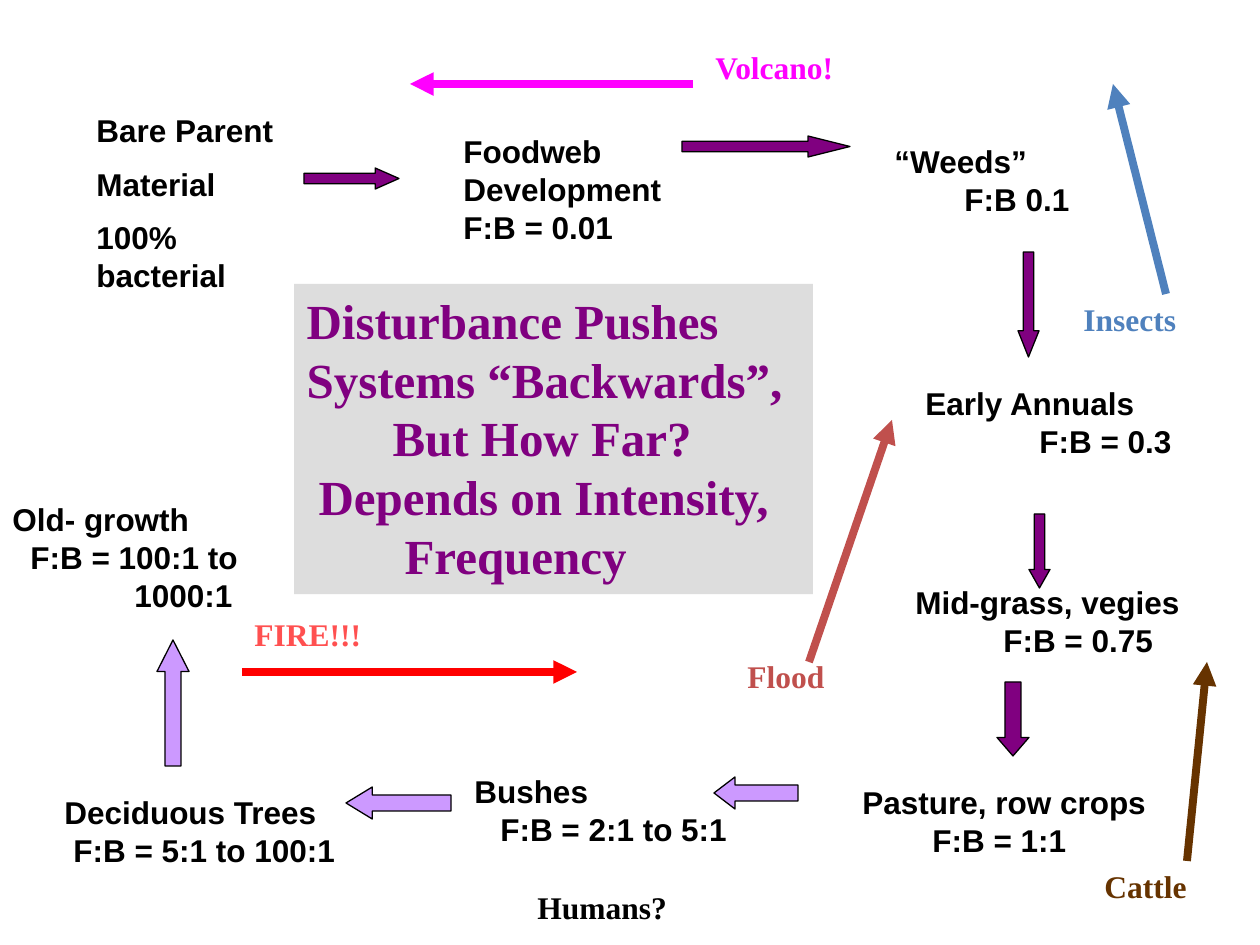
from lxml.etree import SubElement
from pptx import Presentation
from pptx.dml.color import RGBColor
from pptx.enum.shapes import MSO_CONNECTOR, MSO_SHAPE
from pptx.enum.text import MSO_ANCHOR, MSO_AUTO_SIZE, PP_ALIGN
from pptx.oxml.ns import qn
from pptx.util import Pt

SCALE = 914400 / 126
SANS, SERIF = "Arial", "Times New Roman"
PURPLE, LILAC, BLACK = "800080", "CC99FF", "000000"
RIGHT, DOWN = MSO_SHAPE.RIGHT_ARROW, MSO_SHAPE.DOWN_ARROW
LEFT, UP = MSO_SHAPE.LEFT_ARROW, MSO_SHAPE.UP_ARROW

STAGES = [
    (451, 126, 223, 126, [("Foodweb", 0), ("Development", 0), ("F:B = 0.01", 0)]),
    (882, 136, 200, 88, [("“Weeds”", 0), ("F:B 0.1", 70)]),
    (913, 378, 271, 88, [("Early Annuals", 0), ("F:B = 0.3", 114)]),
    (903, 577, 290, 88, [("Mid-grass, vegies", 0), ("F:B = 0.75", 88)]),
    (850, 777, 309, 88, [("Pasture, row crops", 0), ("F:B = 1:1", 70)]),
    (462, 766, 278, 88, [("Bushes", 0), ("F:B = 2:1 to 5:1", 26)]),
    (52, 787, 296, 88, [("Deciduous Trees", 0), ("F:B = 5:1 to 100:1", 9)]),
    (0, 494, 260, 126, [("Old- growth", 0), ("F:B = 100:1 to", 18), ("1000:1", 122)]),
]
STEPS = [
    (RIGHT, 304, 168, 95, 21, PURPLE),
    (RIGHT, 682, 136, 168, 21, PURPLE),
    (DOWN, 1018, 252, 21, 105, PURPLE),
    (DOWN, 1029, 514, 21, 74, PURPLE),
    (DOWN, 997, 682, 32, 74, PURPLE),
    (LEFT, 714, 777, 84, 32, LILAC),
    (LEFT, 346, 787, 105, 32, LILAC),
    (UP, 157, 640, 32, 126, LILAC),
]
LABELS = [
    ("FIRE!!!", 242, 609, 168, "FF5050"),
    ("Flood", 735, 651, 168, "C0504D"),
    ("Insects", 1071, 294, 158, "4F81BD"),
    ("Volcano!", 703, 42, 231, "FF00FF"),
    ("Humans?", 525, 882, 325, BLACK),
    ("Cattle", 1092, 861, 168, "663300"),
]
SHOCKS = [
    (242, 672, 577, 672, "FF0000"),
    (809, 662, 892, 420, "C0504D"),
    (1166, 294, 1113, 84, "4F81BD"),
    (693, 84, 410, 84, "FF00FF"),
    (1187, 861, 1207, 662, "663300"),
]


def px(*sizes):
    """Turn pixels into EMU."""
    return [round(size * SCALE) for size in sizes]


def hue(code):
    """Turn a hex string into a colour."""
    return RGBColor.from_string(code)


class Board:
    """Holds the text style and the current slide."""

    def __init__(self, deck):
        """Add a slide with a title."""
        self.size = 18
        self.slide = deck.slides.add_slide(deck.slide_layouts[5])
        self.shapes = self.slide.shapes

    def fill(self, frame, lines, face, code, size, gap=0):
        """Fill a frame with indented bold lines."""
        frame.auto_size = MSO_AUTO_SIZE.SHAPE_TO_FIT_TEXT
        frame.vertical_anchor = MSO_ANCHOR.TOP
        for order, (words, indent) in enumerate(lines):
            para = frame.add_paragraph() if order else frame.paragraphs[0]
            para.text = words
            para.alignment = PP_ALIGN.LEFT
            para.space_before = Pt(gap if order else 0)
            font = para.font
            font.name, font.size, font.bold = face, Pt(size), True
            font.color.rgb = hue(code)
            if indent:
                props = para._p.get_or_add_pPr()
                props.set("marL", str(px(indent)[0]))
                props.set("indent", "0")

    def title(self, box, lines):
        """Place the title on its grey panel."""
        head = self.shapes.title
        head.left, head.top, head.width, head.height = px(*box)
        head.fill.solid()
        head.fill.fore_color.rgb = hue("DDDDDD")
        head.text_frame.word_wrap = False
        self.fill(head.text_frame, lines, SERIF, PURPLE, 28)

    def text(self, box, lines, face=SANS, code=BLACK, wrap=False, gap=0):
        """Add a text box."""
        frame = self.shapes.add_textbox(*px(*box)).text_frame
        frame.word_wrap = wrap
        self.fill(frame, lines, face, code, self.size, gap)

    def step(self, kind, left, top, width, height, code):
        """Add a block arrow."""
        arrow = self.shapes.add_shape(kind, *px(left, top, width, height))
        arrow.shadow.inherit = False
        arrow.adjustments[1] = max(width, height) / min(width, height) / 4
        arrow.fill.solid()
        arrow.fill.fore_color.rgb = hue(code)
        arrow.line.color.rgb = hue(BLACK)
        arrow.line.width = Pt(0.75)

    def shock(self, *ends, code):
        """Add a thick line with an arrowhead."""
        line = self.shapes.add_connector(MSO_CONNECTOR.STRAIGHT, *px(*ends))
        line.line.color.rgb = hue(code)
        line.line.width = Pt(4.5)
        SubElement(line.line._get_or_add_ln(), qn("a:tailEnd"), type="triangle")
        SubElement(line._element.spPr, qn("a:effectLst"))


def main():
    """Build the slide and save it."""
    deck = Presentation()
    deck.slide_width, deck.slide_height = px(1260, 945)
    board = Board(deck)
    board.title((294, 284, 519, 310), [
        ("Disturbance Pushes", 0),
        ("Systems “Backwards”,", 0),
        ("But How Far?", 86),
        ("Depends on Intensity,", 12),
        ("Frequency", 98),
    ])
    start = [("Bare Parent", 0), ("Material", 0), ("100% bacterial", 0)]
    board.text((84, 105, 231, 202), start, wrap=True, gap=9)
    for *box, lines in STAGES:
        board.text(box, lines)
    for step in STEPS:
        board.step(*step)
    for words, left, top, width, code in LABELS:
        board.text((left, top, width, 63), [(words, 0)], SERIF, code, wrap=True)
    for *ends, code in SHOCKS:
        board.shock(*ends, code=code)
    deck.save("out.pptx")


if __name__ == "__main__":
    main()
